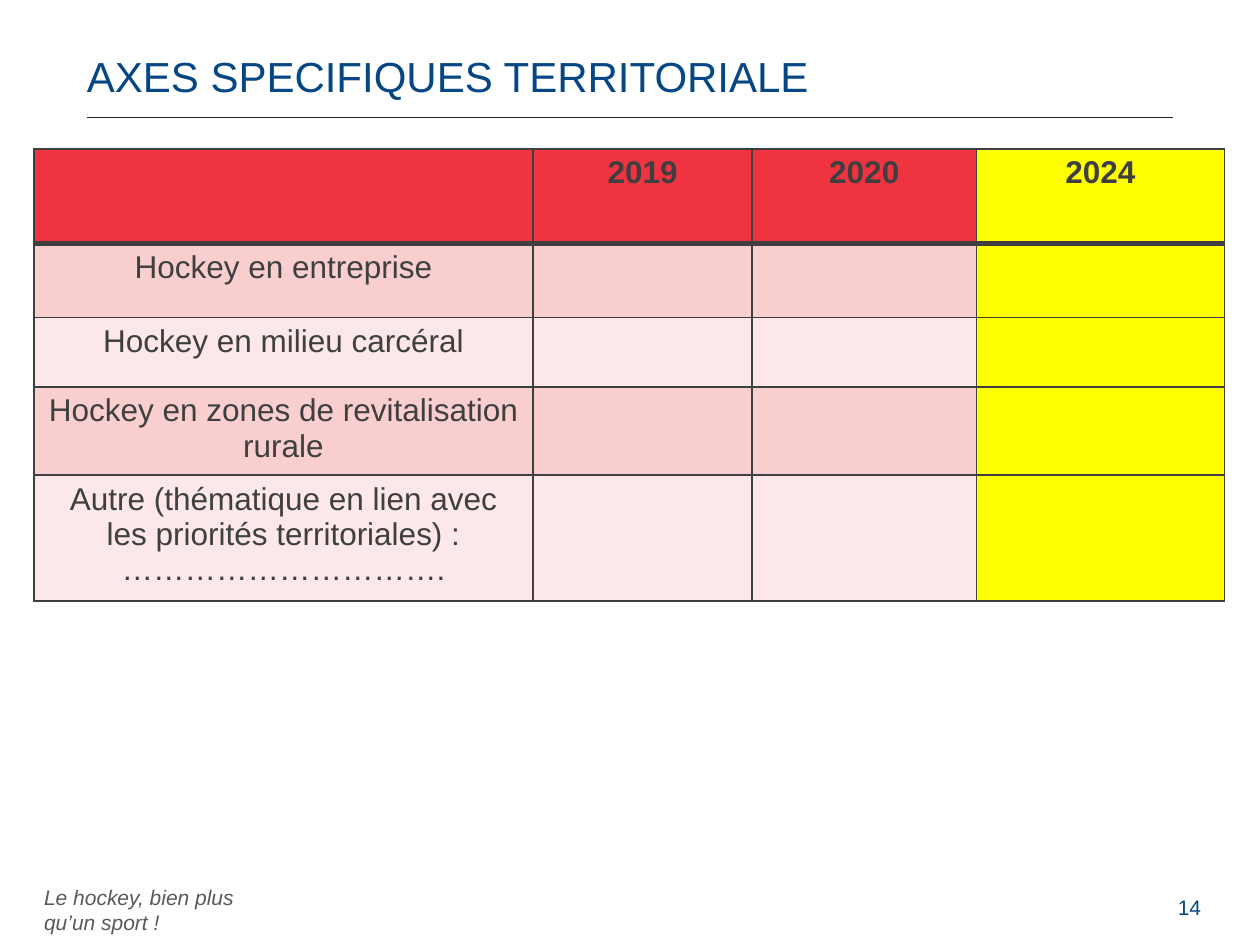
from lxml.etree import SubElement
from pptx import Presentation
from pptx.dml.color import RGBColor
from pptx.enum.shapes import MSO_CONNECTOR
from pptx.enum.text import MSO_ANCHOR, PP_ALIGN
from pptx.oxml.ns import qn
from pptx.util import Pt

COLORS = {
    "blue": "054684", "footer": "595959", "rule": "202020", "ink": "3F3F3F",
    "red": "EF3340", "pink": "F9CECF", "pale": "FCE8E8", "yellow": "FFFF00",
}
TITLE = "AXES SPECIFIQUES TERRITORIALE"
FOOTER = "Le hockey, bien plus qu’un sport !"
PAGE = "14"
YEARS = ["2019", "2020", "2024"]
AXES = [
    "Hockey en entreprise",
    "Hockey en milieu carcéral",
    "Hockey en zones de revitalisation rurale",
    "Autre (thématique en lien avec les priorités territoriales) : ………………………….",
]
COL_WIDTHS = [285.2, 125.2, 128.2, 141.8]
ROW_HEIGHTS = [54, 42.5, 39.6, 49.7, 39.6]


def rgb(name):
    return RGBColor.from_string(COLORS[name])


def add_run(p, text, size, color, bold=False, italic=False):
    r = p.add_run()
    r.text = text
    r.font.name = "Arial"
    r.font.size = Pt(size)
    r.font.bold = bold
    r.font.italic = italic
    r.font.color.rgb = rgb(color)


def add_text(s, box, text, size, color, margins=(7.2, 3.6, 7.2, 3.6),
             wrap=True, anchor=MSO_ANCHOR.TOP, spacing=None, italic=False):
    tf = s.shapes.add_textbox(*map(Pt, box)).text_frame
    tf.word_wrap = wrap
    tf.vertical_anchor = anchor
    tf.margin_left, tf.margin_top, tf.margin_right, tf.margin_bottom = map(Pt, margins)
    p = tf.paragraphs[0]
    p.line_spacing = spacing
    add_run(p, text, size, color, italic=italic)


def set_borders(cell, **widths):
    tcPr = cell._tc.get_or_add_tcPr()
    for side in "LRTB":
        ln = SubElement(tcPr, qn(f"a:ln{side}"), w=str(Pt(widths.get(side, 1))))
        fill = SubElement(ln, qn("a:solidFill"))
        SubElement(fill, qn("a:srgbClr"), val=COLORS["ink"])


def add_axes_table(s):
    rows = [["", *YEARS]] + [[axis] + [""] * len(YEARS) for axis in AXES]
    tbl = s.shapes.add_table(len(rows), len(rows[0]), Pt(19.4), Pt(85),
                             Pt(sum(COL_WIDTHS)), Pt(sum(ROW_HEIGHTS))).table
    tbl.first_row = tbl.horz_banding = False
    for col, width in zip(tbl.columns, COL_WIDTHS):
        col.width = Pt(width)
    for i, texts in enumerate(rows):
        tbl.rows[i].height = Pt(ROW_HEIGHTS[i])
        row_fill = "red" if i == 0 else ("pale", "pink")[i % 2]
        for j, text in enumerate(texts):
            cell = tbl.cell(i, j)
            set_borders(cell, T=3 if i == 1 else 1, B=3 if i == 0 else 1)
            cell.fill.solid()
            cell.fill.fore_color.rgb = rgb("yellow" if j == len(YEARS) else row_fill)
            if text:
                p = cell.text_frame.paragraphs[0]
                p.alignment = PP_ALIGN.CENTER
                add_run(p, text, 18, "ink", bold=i == 0)


prs = Presentation()
prs.slide_width, prs.slide_height = Pt(720), Pt(540)
s = prs.slides.add_slide(prs.slide_layouts[6])

add_text(s, (25.2, 512.6, 140.4, 14.4), FOOTER, 12, "footer", margins=(0, 0, 0, 0),
         wrap=False, anchor=MSO_ANCHOR.MIDDLE, italic=True)
rule = s.shapes.add_connector(MSO_CONNECTOR.STRAIGHT, Pt(49.7), Pt(67), Pt(670.3), Pt(67))
rule.line.color.rgb = rgb("rule")
rule.line.width = Pt(0.5)
SubElement(rule._element.spPr, qn("a:effectLst"))
add_text(s, (49.7, 28.8, 620.6, 37.4), TITLE, 24, "blue",
         margins=(0, 3.6, 7.2, 3.6), spacing=0.9)
add_text(s, (666, 507.6, 33.8, 28.8), PAGE, 12, "blue")
add_axes_table(s)

prs.save("out.pptx")
